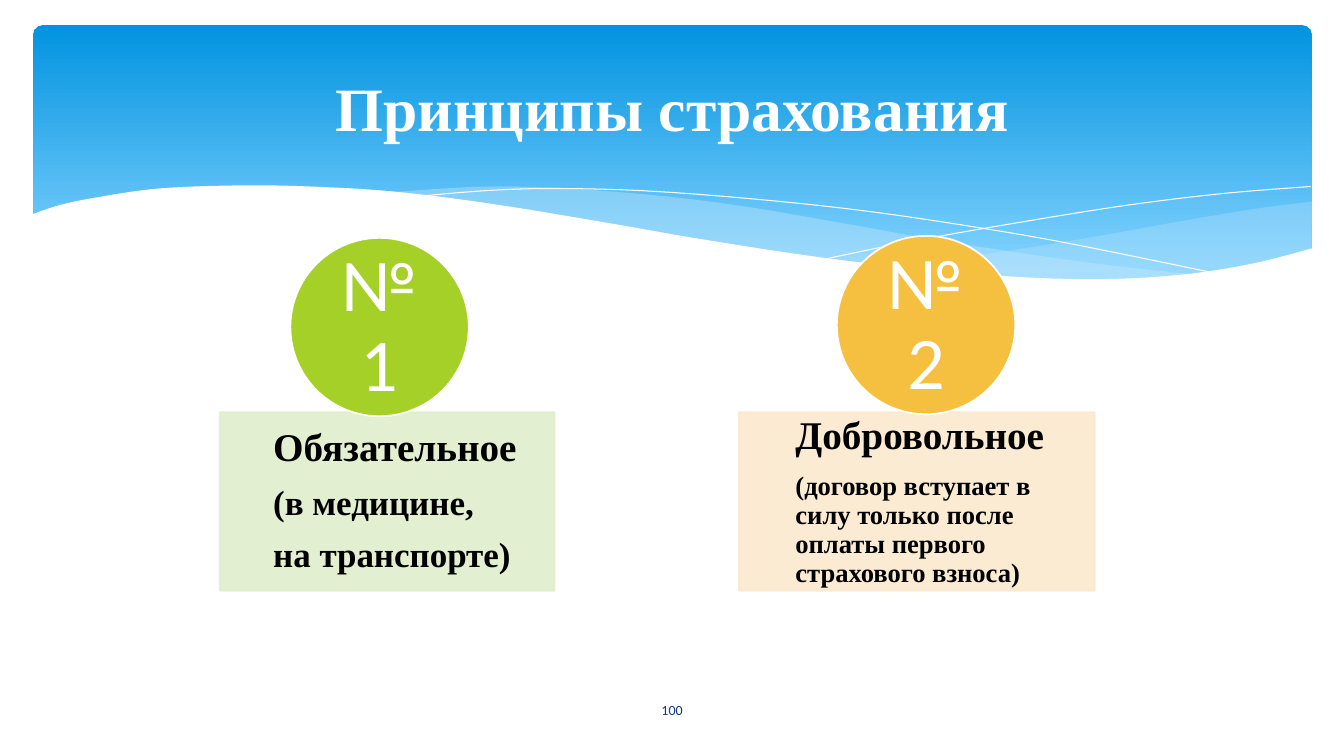
import pptx
import pptx.util
import pptx.dml.color
import pptx.enum.shapes
import pptx.enum.text
import pptx.oxml.ns
from lxml import etree

Inches, Pt = pptx.util.Inches, pptx.util.Pt
SHAPE = pptx.enum.shapes.MSO_SHAPE
ANCHOR = pptx.enum.text.MSO_ANCHOR
ALIGN = pptx.enum.text.PP_ALIGN
SERIF, SANS = "Times New Roman", "Calibri"
COLORS = {
    "white": "FFFFFF", "black": "000000", "navy": "073E87",
    "sky": "0293E0", "pale": "83D3FE", "mist": "C6E7FC",
    "green": "A5D028", "mint": "E1EECD", "gold": "F5C040", "cream": "FBE9CF",
}
RIGHT_TOP = [(13.01, 2), (12.46, 2.07), (11.68, 2.2), (10.73, 2.37), (9.72, 2.53), (8.82, 2.65)]
RIGHT_LOW = [(8.82, 2.65), (9.58, 2.72), (10.25, 2.77), (10.99, 2.77), (11.63, 2.74),
             (12.28, 2.65), (13.01, 2.47)]
MID_TOP = [(11.9, 2.73), (10.76, 2.6), (9.41, 2.4), (8.39, 2.22), (7.4, 2.05), (6.52, 1.94),
           (5.6, 1.87), (4.82, 1.85), (3.82, 1.91)]
MID_LOW = [(3.82, 1.91), (4.83, 2.03), (5.99, 2.22), (7.06, 2.4), (8.24, 2.58), (9.26, 2.7),
           (10.14, 2.77), (11.04, 2.78), (11.9, 2.73)]
FALL = [(4.12, 1.95), (4.84, 1.89), (5.55, 1.87), (6.52, 1.9), (7.75, 2), (8.86, 2.13),
        (10.14, 2.33), (11.08, 2.51), (12.1, 2.72)]
RISE = [(8.18, 2.57), (8.96, 2.41), (9.97, 2.23), (11.15, 2.04), (12.13, 1.92), (13, 1.85)]
FRONT = [(13.03, 2.46), (12.4, 2.62), (11.67, 2.73), (10.78, 2.77), (9.69, 2.72), (8.34, 2.58),
         (7.06, 2.39), (5.96, 2.2), (4.86, 2.02), (3.9, 1.9), (3.06, 1.85), (2.35, 1.84),
         (1.58, 1.87), (1.01, 1.95), (0.61, 2.03), (0.31, 2.13)]


def rgb(name):
    """Return the named colour."""
    return pptx.dml.color.RGBColor.from_string(COLORS[name])


def paint(shape, fill=None, line=None, width=1.25, alpha=100):
    """Set fill, line and opacity of a shape without a shadow."""
    shape.shadow.inherit = False
    if fill:
        shape.fill.solid()
        shape.fill.fore_color.rgb = rgb(fill)
    else:
        shape.fill.background()
    if line:
        shape.line.color.rgb = rgb(line)
        shape.line.width = Pt(width)
    else:
        shape.line.fill.background()
    if alpha < 100:
        qn = pptx.oxml.ns.qn
        for tag in list(shape.element.iter(qn("a:srgbClr"))):
            etree.SubElement(tag, qn("a:alpha"), val=str(alpha * 1000))


def write(shape, rows, font, color, bold=False, align=ALIGN.CENTER, pad=(0.05,) * 4, lead=1):
    """Fill a shape with rows of (text, size, space after)."""
    frame = shape.text_frame
    frame.word_wrap = True
    frame.vertical_anchor = ANCHOR.MIDDLE
    frame.margin_left, frame.margin_top, frame.margin_right, frame.margin_bottom = map(Inches, pad)
    for i, (text, size, after) in enumerate(rows):
        para = frame.paragraphs[0] if i == 0 else frame.add_paragraph()
        para.text = text
        para.alignment = align
        para.line_spacing = lead
        para.space_before, para.space_after = Pt(0), Pt(after)
        para.font.name, para.font.size, para.font.bold = font, Pt(size), bold
        para.font.color.rgb = rgb(color)


def bend(knots, steps=6):
    """Return points on a smooth curve through the knots."""
    ends = [knots[0], *knots, knots[-1]]
    points = [knots[0]]
    for a, b, c, d in zip(ends, ends[1:], ends[2:], ends[3:]):
        for k in range(1, steps + 1):
            t = k / steps
            points.append(tuple(
                q + t / 2 * (r - p + t * (2 * p - 5 * q + 4 * r - s + t * (3 * q - p - 3 * r + s)))
                for p, q, r, s in zip(a, b, c, d)))
    return points


def trace(slide, points, close=True, **look):
    """Draw an outline through points given in inches."""
    spots = [(Inches(x), Inches(y)) for x, y in points]
    build = slide.shapes.build_freeform(*spots[0])
    build.add_line_segments(spots[1:], close=close)
    paint(build.convert_to_shape(), **look)


def banner(slide, x, y, w, h):
    """Draw the blue banner with its waves."""
    back = slide.shapes.add_shape(SHAPE.ROUNDED_RECTANGLE, *map(Inches, (x, y, w, h)))
    back.adjustments[0] = 0.034
    paint(back)
    back.fill.gradient()
    back.fill.gradient_angle = 270
    for stop, place, name in zip(back.fill.gradient_stops, (0, 0.9), ("sky", "pale")):
        stop.position, stop.color.rgb = place, rgb(name)
    trace(slide, bend(RIGHT_TOP) + bend(RIGHT_LOW), fill="mist", alpha=29)
    trace(slide, bend(MID_TOP) + bend(MID_LOW), fill="mist", alpha=40)
    for knots in (FALL, RISE):
        trace(slide, bend(knots), close=False, line="white", width=0)
    trace(slide, bend(FRONT) + [(0.31, 3.29), (13.03, 3.29)], fill="white")


def head(slide, x, y, w, h):
    """Place the title above the banner."""
    title = slide.shapes.title
    slide.shapes.element.append(title.element)
    title.left, title.top, title.width, title.height = map(Inches, (x, y, w, h))
    write(title, [("Принципы страхования", 44, 0)], SERIF, "white", True)


def card(slide, x, y, w, h, dx, dy, indent, tint, tone, label, rows):
    """Draw a text card and its numbered disc, shifted by dx and dy."""
    box = slide.shapes.add_shape(SHAPE.RECTANGLE, *map(Inches, (x, y, w, h)))
    paint(box, tint, tint, alpha=90)
    write(box, rows, SERIF, "black", True, ALIGN.LEFT, (indent, 0.05, 0.22, 0.05), 0.9)
    disc = slide.shapes.add_shape(SHAPE.OVAL, *map(Inches, (x + dx, y + dy, h, h)))
    paint(disc, tone, "white")
    write(disc, [(label, 53, 21)], SANS, "white", pad=(0.05, 0, 0.05, 0), lead=0.9)


def foot(slide, x, y, w, h):
    """Place the page number."""
    write(slide.shapes.add_textbox(*map(Inches, (x, y, w, h))), [("100", 10, 0)], SANS, "navy")


def main():
    """Build and save the slide."""
    deck = pptx.Presentation()
    deck.slide_width, deck.slide_height = Inches(13.33), Inches(7.5)
    slide = deck.slides.add_slide(deck.slide_layouts[5])
    banner(slide, 0.33, 0.25, 12.68, 2.7)
    head(slide, 0.67, 0.37, 12, 1.37)
    card(slide, 2.18, 4.09, 3.32, 1.77, 0.7, -1.73, 0.53, "mint", "green", "№ 1",
         [("Обязательное", 28, 11), ("(в медицине,", 25, 10), ("на транспорте)", 25, 10)])
    card(slide, 7.33, 4.09, 3.53, 1.77, 0.97, -1.75, 0.56, "cream", "gold", "№ 2",
         [("Добровольное", 28, 11),
          ("(договор вступает в силу только после оплаты первого страхового взноса)", 19, 8)])
    foot(slide, 5.82, 6.84, 1.69, 0.4)
    deck.save("out.pptx")


if __name__ == "__main__":
    main()
